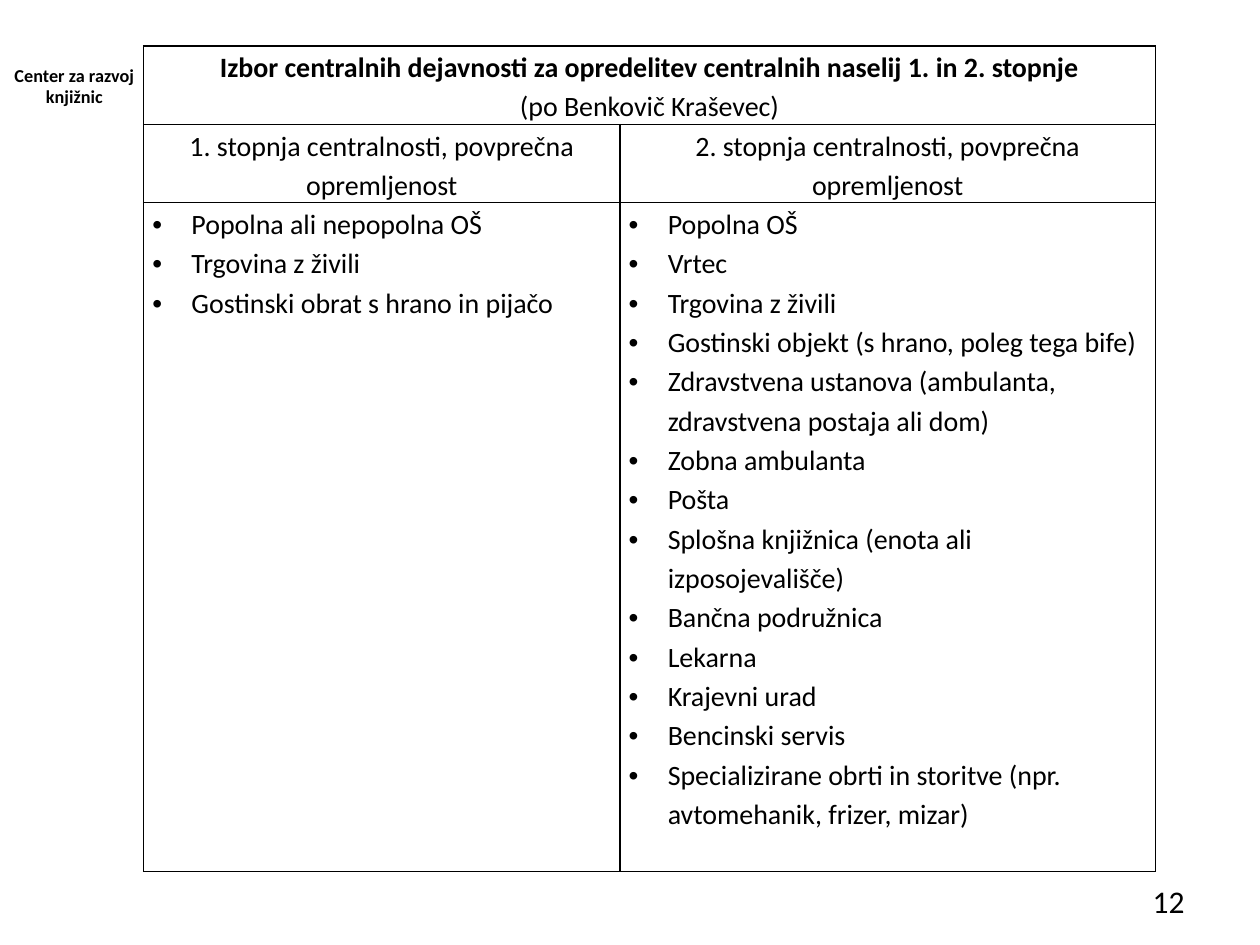
from lxml.etree import SubElement
from pptx import Presentation
from pptx.dml.color import RGBColor
from pptx.enum.text import MSO_ANCHOR, PP_ALIGN
from pptx.oxml import parse_xml
from pptx.oxml.ns import nsdecls, qn
from pptx.util import Inches, Pt

COLORS = {"text": "000000", "border": "000000"}
TITLE = [
    ("Izbor centralnih dejavnosti za opredelitev centralnih naselij 1. in 2. stopnje", True),
    ("(po Benkovič Kraševec)", False),
]
LEVELS = {
    "1. stopnja centralnosti, povprečna opremljenost": [
        "Popolna ali nepopolna OŠ",
        "Trgovina z živili",
        "Gostinski obrat s hrano in pijačo",
    ],
    "2. stopnja centralnosti, povprečna opremljenost": [
        "Popolna OŠ",
        "Vrtec",
        "Trgovina z živili",
        "Gostinski objekt (s hrano, poleg tega bife)",
        "Zdravstvena ustanova (ambulanta, zdravstvena postaja ali dom)",
        "Zobna ambulanta",
        "Pošta",
        "Splošna knjižnica (enota ali izposojevališče)",
        "Bančna podružnica",
        "Lekarna",
        "Krajevni urad",
        "Bencinski servis",
        "Specializirane obrti in storitve (npr. avtomehanik, frizer, mizar)",
    ],
}


class SlideBuilder:
    """Holds the style and current slide; lengths are percentages of the slide's size."""

    font = "Calibri"
    table_size = 16
    line_spacing = 1.15
    bullet_indent = Inches(0.31)
    borders = {"lnL": 1, "lnR": 1, "lnT": 0.5, "lnB": 0.5}

    def __init__(self, prs):
        self.width, self.height = prs.slide_width, prs.slide_height
        self.s = prs.slides.add_slide(prs.slide_layouts[6])

    def x(self, share):
        return round(self.width * share / 100)

    def y(self, share):
        return round(self.height * share / 100)

    def box(self, left, top, width, height):
        return self.x(left), self.y(top), self.x(width), self.y(height)

    def add_text(self, p, text, size, align, bold=False):
        p.alignment = align
        r = p.add_run()
        r.text = text
        for name, value in {"name": self.font, "size": Pt(size), "bold": bold}.items():
            setattr(r.font, name, value)
        r.font.color.rgb = RGBColor.from_string(COLORS["text"])

    def label(self, text, box, size, align, bold=False):
        tf = self.s.shapes.add_textbox(*self.box(*box)).text_frame
        tf.word_wrap = True
        tf.vertical_anchor = MSO_ANCHOR.MIDDLE
        self.add_text(tf.paragraphs[0], text, size, align, bold)

    def table(self, box, columns, rows):
        shape = self.s.shapes.add_table(len(rows), len(columns), *self.box(*box))
        table = shape.table
        table.first_row = table.horz_banding = False
        for column, share in zip(table.columns, columns):
            column.width = self.x(share)
        for row, share in zip(table.rows, rows):
            row.height = self.y(share)
        return table

    def cell(self, cell, lines, bulleted=False):
        """Fill a cell with (text, bold) lines, either centred or as a bulleted list."""
        margins = {"margin_left": 0.07, "margin_right": 0.07, "margin_top": 0, "margin_bottom": 0}
        for name, value in margins.items():
            setattr(cell, name, Inches(value))
        tf = cell.text_frame
        for i, (text, bold) in enumerate(lines):
            p = tf.add_paragraph() if i else tf.paragraphs[0]
            p.line_spacing = self.line_spacing
            if bulleted:
                self.bullet(p)
            align = PP_ALIGN.LEFT if bulleted else PP_ALIGN.CENTER
            self.add_text(p, text, self.table_size, align, bold)

    def bullet(self, p):
        pPr = p._p.get_or_add_pPr()
        pPr.set("marL", str(self.bullet_indent))
        pPr.set("indent", str(-self.bullet_indent))
        SubElement(pPr, qn("a:buFont"), typeface="Arial")
        SubElement(pPr, qn("a:buChar"), char="•")

    def rule(self, table):
        """Clear the fills and draw thin row lines inside a thicker frame."""
        last = len(table.rows) - 1
        for i, row in enumerate(table.rows):
            for cell in row.cells:
                cell.fill.background()
                widths = dict(self.borders)
                if i == 0:
                    widths["lnT"] = 1
                if i == last:
                    widths["lnB"] = 1
                tcPr = cell._tc.get_or_add_tcPr()
                for k, (side, width) in enumerate(widths.items()):
                    tcPr.insert(k, parse_xml(
                        f'<a:{side} {nsdecls("a")} w="{Pt(width)}"><a:solidFill>'
                        f'<a:srgbClr val="{COLORS["border"]}"/></a:solidFill></a:{side}>'))


def main():
    prs = Presentation()
    prs.slide_width, prs.slide_height = Inches(10), Inches(7.5)
    slide = SlideBuilder(prs)
    slide.label("Center za razvoj knjižnic", (0, 6.4, 11.8, 5.33), 10.4, PP_ALIGN.CENTER, True)

    table = slide.table((11.4, 4.85, 80.3, 87.4), (37.8, 42.5), (8.3, 8.3, 70.8))
    slide.rule(table)
    title = table.cell(0, 0)
    title.merge(table.cell(0, 1))
    title.vertical_anchor = MSO_ANCHOR.MIDDLE
    slide.cell(title, TITLE)
    for column, (heading, activities) in enumerate(LEVELS.items()):
        slide.cell(table.cell(1, column), [(heading, False)])
        slide.cell(table.cell(2, column), [(text, False) for text in activities], bulleted=True)

    slide.label("12", (71.7, 92.7, 23.3, 5.33), 18, PP_ALIGN.RIGHT)
    prs.save("out.pptx")


if __name__ == "__main__":
    main()
